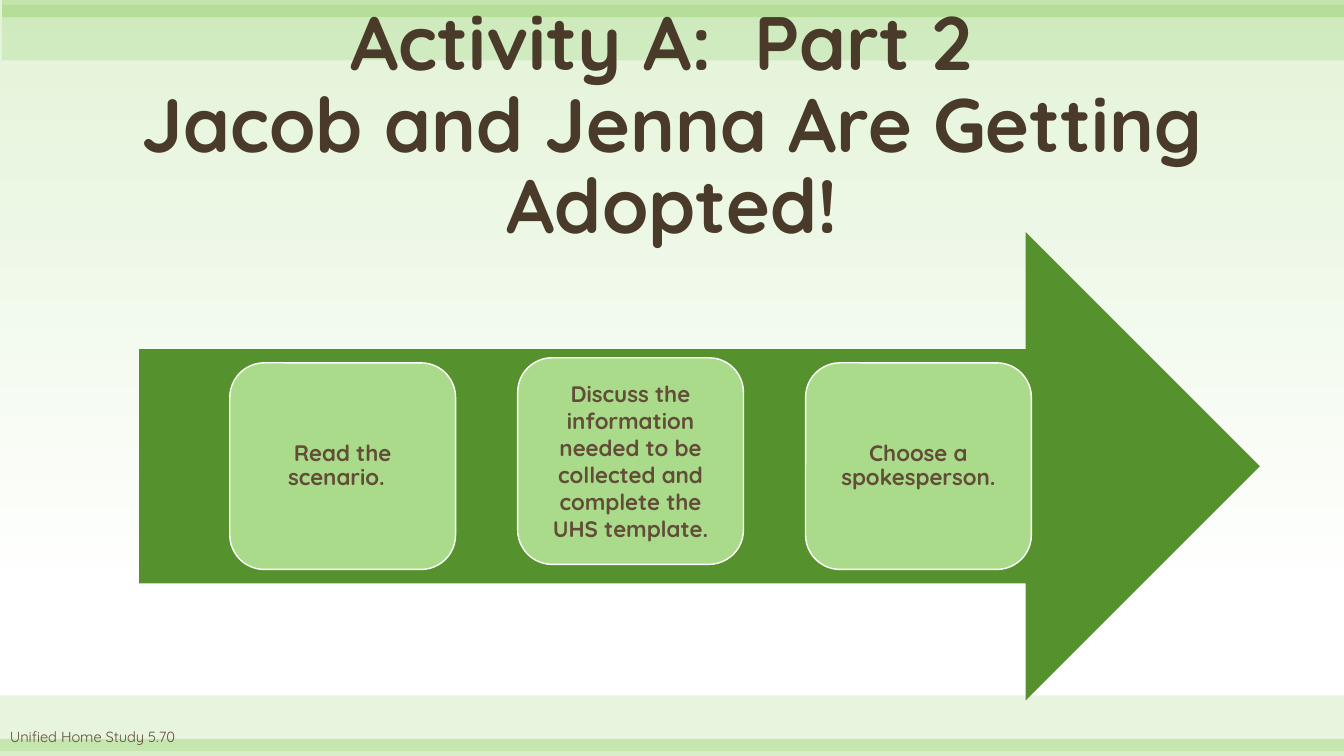
from dataclasses import dataclass

from lxml.etree import SubElement
from pptx import Presentation
from pptx.dml.color import RGBColor
from pptx.enum.shapes import MSO_SHAPE as Preset
from pptx.enum.text import MSO_ANCHOR as Anchor, PP_ALIGN as Align
from pptx.oxml.ns import qn
from pptx.shapes.autoshape import Shape
from pptx.slide import Slide
from pptx.util import Emu, Inches, Pt

SLIDE_WIDTH = Inches(13.33)
SLIDE_HEIGHT = Inches(7.5)


@dataclass(frozen=True)
class Theme:
    font: str = "Quicksand"
    sky: str = "E3F3D8"
    white: str = "FFFFFF"
    band: str = "72C23C"
    arrow: str = "55922D"
    card: str = "AADB8A"
    title_text: str = "4A3A2A"
    body_text: str = "624D38"
    title_size: float = 54
    card_size: float = 16
    footer_size: float = 10.5


@dataclass(frozen=True)
class Box:
    """Shares of the slide's size, in percent."""

    left: float
    top: float
    width: float
    height: float

    def lengths(self) -> tuple[Emu, Emu, Emu, Emu]:
        return (
            Emu(round(SLIDE_WIDTH * self.left / 100)),
            Emu(round(SLIDE_HEIGHT * self.top / 100)),
            Emu(round(SLIDE_WIDTH * self.width / 100)),
            Emu(round(SLIDE_HEIGHT * self.height / 100)),
        )


@dataclass(frozen=True)
class Band:
    box: Box
    opacity: int


@dataclass(frozen=True)
class Step:
    text: str
    top: float
    line_spacing: float


@dataclass(frozen=True)
class TextStyle:
    size: float
    color: str
    bold: bool = True
    align: Align = Align.CENTER
    anchor: Anchor = Anchor.MIDDLE
    line_spacing: float = 1.0


THEME = Theme()
BANDS = (
    Band(Box(0, 92, 100, 7.33), 17),
    Band(Box(0, 97.73, 100, 2.27), 28),
    Band(Box(0.15, 0.67, 99.85, 7.33), 17),
    Band(Box(0.15, 0, 99.85, 2.27), 28),
)
TITLE_BOX = Box(0, 2.27, 100, 31.47)
ARROW_BOX = Box(10.35, 30.67, 83.4, 62)
FOOTER_BOX = Box(0, 95.6, 22.43, 4.4)
CARD_LEFT, CARD_PITCH = 17.1, 21.42
CARD_WIDTH, CARD_HEIGHT = 16.8, 27.33
CARD_INSET = Inches(0.18)
STEPS = (
    Step("Read the scenario.  ", 48, 0.9),
    Step(
        "Discuss the information needed to be collected and complete the UHS template.",
        47.33,
        1.0,
    ),
    Step("Choose a spokesperson.", 48, 0.9),
)


def paint_background(slide: Slide) -> None:
    fill = slide.background.fill
    fill.gradient()
    fill.gradient_angle = 270
    stops = ((0, THEME.sky), (0.79, THEME.white))
    for stop, (position, color) in zip(fill.gradient_stops, stops):
        stop.position = position
        stop.color.rgb = RGBColor.from_string(color)


def add_filled(slide: Slide, preset: Preset, box: Box, color: str) -> Shape:
    shape = slide.shapes.add_shape(preset, *box.lengths())
    shape.shadow.inherit = False
    shape.fill.solid()
    shape.fill.fore_color.rgb = RGBColor.from_string(color)
    shape.line.fill.background()
    return shape


def add_band(slide: Slide, band: Band) -> None:
    shape = add_filled(slide, Preset.RECTANGLE, band.box, THEME.band)
    color = shape.element.spPr.find(f"{qn('a:solidFill')}/{qn('a:srgbClr')}")
    SubElement(color, qn("a:alpha"), val=str(band.opacity * 1000))


def write_text(shape: Shape, text: str, style: TextStyle) -> None:
    frame = shape.text_frame
    frame.word_wrap = True
    frame.vertical_anchor = style.anchor
    paragraph = frame.paragraphs[0]
    paragraph.text = text
    paragraph.alignment = style.align
    paragraph.line_spacing = style.line_spacing
    for run in paragraph.runs:
        run.font.name = THEME.font
        run.font.size = Pt(style.size)
        run.font.bold = style.bold
        run.font.color.rgb = RGBColor.from_string(style.color)


def add_text(slide: Slide, box: Box, text: str, style: TextStyle) -> None:
    write_text(slide.shapes.add_textbox(*box.lengths()), text, style)


def add_card(slide: Slide, column: int, step: Step) -> None:
    box = Box(CARD_LEFT + column * CARD_PITCH, step.top, CARD_WIDTH, CARD_HEIGHT)
    card = add_filled(slide, Preset.ROUNDED_RECTANGLE, box, THEME.card)
    card.line.color.rgb = RGBColor.from_string(THEME.white)
    card.line.width = Pt(1)
    frame = card.text_frame
    frame.margin_left = frame.margin_right = CARD_INSET
    frame.margin_top = frame.margin_bottom = CARD_INSET
    style = TextStyle(THEME.card_size, THEME.body_text, line_spacing=step.line_spacing)
    write_text(card, step.text, style)


def main() -> None:
    presentation = Presentation()
    presentation.slide_width = SLIDE_WIDTH
    presentation.slide_height = SLIDE_HEIGHT
    slide = presentation.slides.add_slide(presentation.slide_layouts[6])
    paint_background(slide)
    for band in BANDS:
        add_band(slide, band)
    add_text(
        slide,
        TITLE_BOX,
        "Activity A:  Part 2 \vJacob and Jenna Are Getting Adopted!",
        TextStyle(
            THEME.title_size, THEME.title_text, anchor=Anchor.BOTTOM, line_spacing=0.9
        ),
    )
    add_filled(slide, Preset.RIGHT_ARROW, ARROW_BOX, THEME.arrow)
    for column, step in enumerate(STEPS):
        add_card(slide, column, step)
    add_text(
        slide,
        FOOTER_BOX,
        "Unified Home Study 5.70",
        TextStyle(THEME.footer_size, THEME.body_text, False, Align.LEFT, Anchor.TOP),
    )
    presentation.save("out.pptx")


if __name__ == "__main__":
    main()
